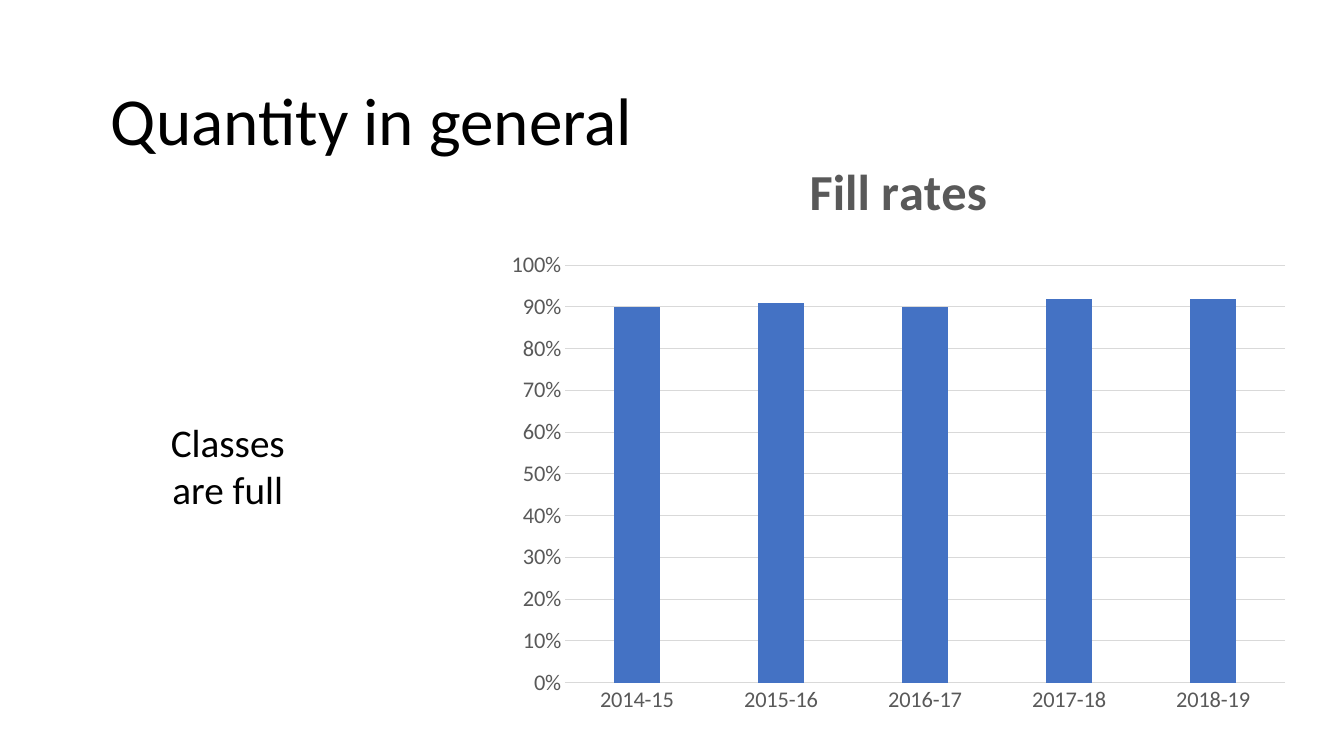
from pptx import Presentation
from pptx.chart.data import CategoryChartData
from pptx.dml.color import RGBColor
from pptx.enum.chart import XL_CHART_TYPE, XL_TICK_MARK
from pptx.enum.text import MSO_ANCHOR, PP_ALIGN
from pptx.util import Pt

BLACK = RGBColor(0x00, 0x00, 0x00)
GREY = RGBColor(0x59, 0x59, 0x59)
LIGHT = RGBColor(0xD9, 0xD9, 0xD9)
BLUE = RGBColor(0x44, 0x72, 0xC4)


class Deck:
    font = "Calibri"

    def __init__(self, width, height):
        self.prs = Presentation()
        self.prs.slide_width, self.prs.slide_height = Pt(width), Pt(height)
        self.s = self.prs.slides.add_slide(self.prs.slide_layouts[5])

    def style(self, font, size, color, bold=False):
        font.name, font.size, font.bold = self.font, Pt(size), bold
        font.color.rgb = color

    def set_text(self, tf, text, size, align):
        tf.word_wrap = True
        tf.vertical_anchor = MSO_ANCHOR.TOP
        p = tf.paragraphs[0]
        p.text, p.alignment = text, align
        self.style(p.font, size, BLACK)

    def title(self, text, x, y, w, h, size):
        sp = self.s.shapes.title
        sp.left, sp.top, sp.width, sp.height = Pt(x), Pt(y), Pt(w), Pt(h)
        self.set_text(sp.text_frame, text, size, PP_ALIGN.LEFT)

    def text(self, text, x, y, w, h, size):
        sp = self.s.shapes.add_textbox(Pt(x), Pt(y), Pt(w), Pt(h))
        self.set_text(sp.text_frame, text, size, PP_ALIGN.CENTER)

    def columns(self, name, rates, x, y, w, h):
        data = CategoryChartData(number_format="0%")
        data.categories = list(rates)
        data.add_series(name, rates.values())
        chart = self.s.shapes.add_chart(
            XL_CHART_TYPE.COLUMN_CLUSTERED, Pt(x), Pt(y), Pt(w), Pt(h), data
        ).chart
        self.style(chart.font, 10, BLACK)
        chart.has_legend = False
        chart.has_title = True
        p = chart.chart_title.text_frame.paragraphs[0]
        p.text = name
        self.style(p.font, 36, GREY, True)
        chart.chart_title.include_in_layout = False

        plot = chart.plots[0]
        plot.gap_width, plot.overlap, plot.vary_by_categories = 219, -27, False
        fill = plot.series[0].format.fill
        fill.solid()
        fill.fore_color.rgb = BLUE

        cat, val = chart.category_axis, chart.value_axis
        for axis in (cat, val):
            axis.major_tick_mark = axis.minor_tick_mark = XL_TICK_MARK.NONE
            self.style(axis.tick_labels.font, 16, GREY)
        val.minimum_scale, val.maximum_scale, val.major_unit = 0, 1, 0.1
        val.tick_labels.number_format = "0%"
        val.tick_labels.number_format_is_linked = False
        val.format.line.fill.background()
        for line in (cat.format.line, val.major_gridlines.format.line):
            line.color.rgb, line.width = LIGHT, Pt(0.75)


def main():
    deck = Deck(960, 540)
    deck.title("Quantity in general", 72, 52, 414, 65.5, 48)
    deck.text("Classes are full", 93.6, 295.5, 138.2, 75, 28)
    rates = {"2014-15": 0.9, "2015-16": 0.91, "2016-17": 0.9,
             "2017-18": 0.92, "2018-19": 0.92}
    deck.columns("Fill rates", rates, 354, 93, 575.5, 425.5)
    deck.prs.save("out.pptx")


if __name__ == "__main__":
    main()
